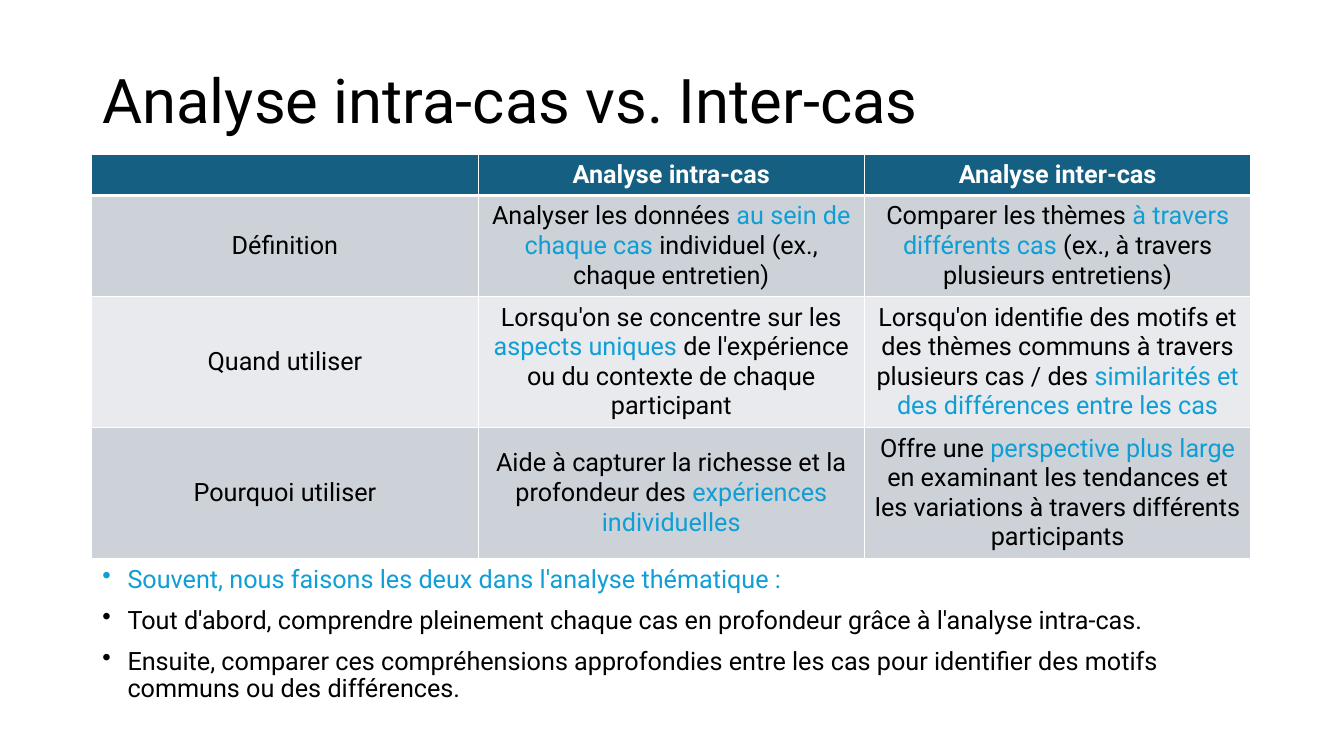
"""Build a slide comparing within-case and cross-case analysis."""
from dataclasses import dataclass

from lxml import etree
from pptx import Presentation, util as u
from pptx.dml.color import RGBColor
from pptx.enum import text as t
from pptx.oxml import ns


@dataclass(frozen=True)
class Theme:
    font: str = "Roboto"
    ink: str = "000000"
    accent: str = "0F9ED5"
    white: str = "FFFFFF"
    header: str = "156082"
    bands: tuple[str, str] = ("CCD2D8", "E8EAED")
    title_size: int = 44
    body_size: int = 18
    border: int = 1
    header_border: int = 3


@dataclass(frozen=True)
class Area:
    column: float
    row: float
    columns: float
    rows: float


@dataclass(frozen=True)
class Criterion:
    label: str
    intra: str
    inter: str
    rows: float


THEME = Theme()
WIDTH, HEIGHT = u.Inches(13.333), u.Inches(7.5)
GRID_COLUMNS, GRID_ROWS = 160, 90
MARK = "*"

TITLE_AREA = Area(11, 3.6, 138, 17.4)
TABLE_AREA = Area(10.92, 18.36, 138, 47.22)
SUMMARY_AREA = Area(11, 66.84, 138, 57.12)

TITLE = "Analyse intra-cas vs. Inter-cas"
CRITERIA = (
    Criterion("", "Analyse intra-cas", "Analyse inter-cas", 4.92),
    Criterion("Définition",
              "Analyser les données *au sein de chaque cas* individuel (ex., chaque entretien)",
              "Comparer les thèmes *à travers différents cas* (ex., à travers plusieurs entretiens)",
              11.7),
    Criterion("Quand utiliser",
              "Lorsqu'on se concentre sur les *aspects uniques* de l'expérience ou du contexte "
              "de chaque participant",
              "Lorsqu'on identifie des motifs et des thèmes communs à travers plusieurs cas / des "
              "*similarités et des différences entre les cas*",
              15.3),
    Criterion("Pourquoi utiliser",
              "Aide à capturer la richesse et la profondeur des *expériences individuelles*",
              "Offre une *perspective plus large* en examinant les tendances et les variations "
              "à travers différents participants",
              15.3),
)
SUMMARY = (
    "*Souvent, nous faisons les deux dans l'analyse thématique :*",
    "Tout d'abord, comprendre pleinement chaque cas en profondeur grâce à l'analyse intra-cas.",
    "Ensuite, comparer ces compréhensions approfondies entre les cas pour identifier des motifs "
    "communs ou des différences.",
)


def across(columns: float) -> int:
    return round(WIDTH * columns / GRID_COLUMNS)


def down(rows: float) -> int:
    return round(HEIGHT * rows / GRID_ROWS)


def place(area: Area) -> tuple[int, int, int, int]:
    return across(area.column), down(area.row), across(area.columns), down(area.rows)


def write(paragraph, wording: str, size: int, color: str = THEME.ink, bold: bool = False) -> None:
    font = paragraph.font
    font.name, font.size, font.bold = THEME.font, u.Pt(size), bold
    font.color.rgb = RGBColor.from_string(color)
    for index, part in enumerate(wording.split(MARK)):
        if part:
            run = paragraph.add_run()
            run.text = part
            if index % 2:
                run.font.color.rgb = RGBColor.from_string(THEME.accent)


def add_borders(cell, bottom: int) -> None:
    properties = cell._tc.get_or_add_tcPr()
    for side in "LRTB":
        points = bottom if side == "B" else THEME.border
        line = etree.SubElement(properties, ns.qn(f"a:ln{side}"), w=str(u.Pt(points)))
        fill = etree.SubElement(line, ns.qn("a:solidFill"))
        etree.SubElement(fill, ns.qn("a:srgbClr"), val=THEME.white)


def add_bullet(paragraph) -> None:
    properties = paragraph._p.get_or_add_pPr()
    indent = u.Inches(0.25)
    properties.set("marL", str(indent))
    properties.set("indent", str(-indent))
    bullet = etree.Element(ns.qn("a:buChar"), char="•")
    properties.find(ns.qn("a:defRPr")).addprevious(bullet)


def add_text_frame(slide, area: Area):
    frame = slide.shapes.add_textbox(*place(area)).text_frame
    frame.word_wrap = True
    return frame


def add_title(slide) -> None:
    frame = add_text_frame(slide, TITLE_AREA)
    frame.vertical_anchor = t.MSO_ANCHOR.MIDDLE
    heading = frame.paragraphs[0]
    heading.line_spacing = 0.9
    write(heading, TITLE, THEME.title_size)


def add_comparison(slide) -> None:
    comparison = slide.shapes.add_table(len(CRITERIA), 3, *place(TABLE_AREA)).table
    for column in comparison.columns:
        column.width = across(TABLE_AREA.columns / 3)
    for index, criterion in enumerate(CRITERIA):
        is_header = index == 0
        comparison.rows[index].height = down(criterion.rows)
        background = THEME.header if is_header else THEME.bands[(index - 1) % 2]
        wordings = (criterion.label, criterion.intra, criterion.inter)
        for cell, wording in zip(comparison.rows[index].cells, wordings):
            add_borders(cell, THEME.header_border if is_header else THEME.border)
            cell.fill.solid()
            cell.fill.fore_color.rgb = RGBColor.from_string(background)
            cell.vertical_anchor = t.MSO_ANCHOR.MIDDLE
            paragraph = cell.text_frame.paragraphs[0]
            paragraph.alignment = t.PP_ALIGN.CENTER
            write(paragraph, wording, THEME.body_size,
                  THEME.white if is_header else THEME.ink, is_header)


def add_summary(slide) -> None:
    frame = add_text_frame(slide, SUMMARY_AREA)
    for index, point in enumerate(SUMMARY):
        paragraph = frame.add_paragraph() if index else frame.paragraphs[0]
        paragraph.line_spacing = 0.9
        paragraph.space_before = u.Pt(10)
        is_accent = point.startswith(MARK)
        write(paragraph, point.strip(MARK), THEME.body_size,
              THEME.accent if is_accent else THEME.ink)
        add_bullet(paragraph)


def main() -> None:
    deck = Presentation()
    deck.slide_width, deck.slide_height = WIDTH, HEIGHT
    slide = deck.slides.add_slide(deck.slide_layouts[6])
    add_title(slide)
    add_comparison(slide)
    add_summary(slide)
    deck.save("out.pptx")


if __name__ == "__main__":
    main()
